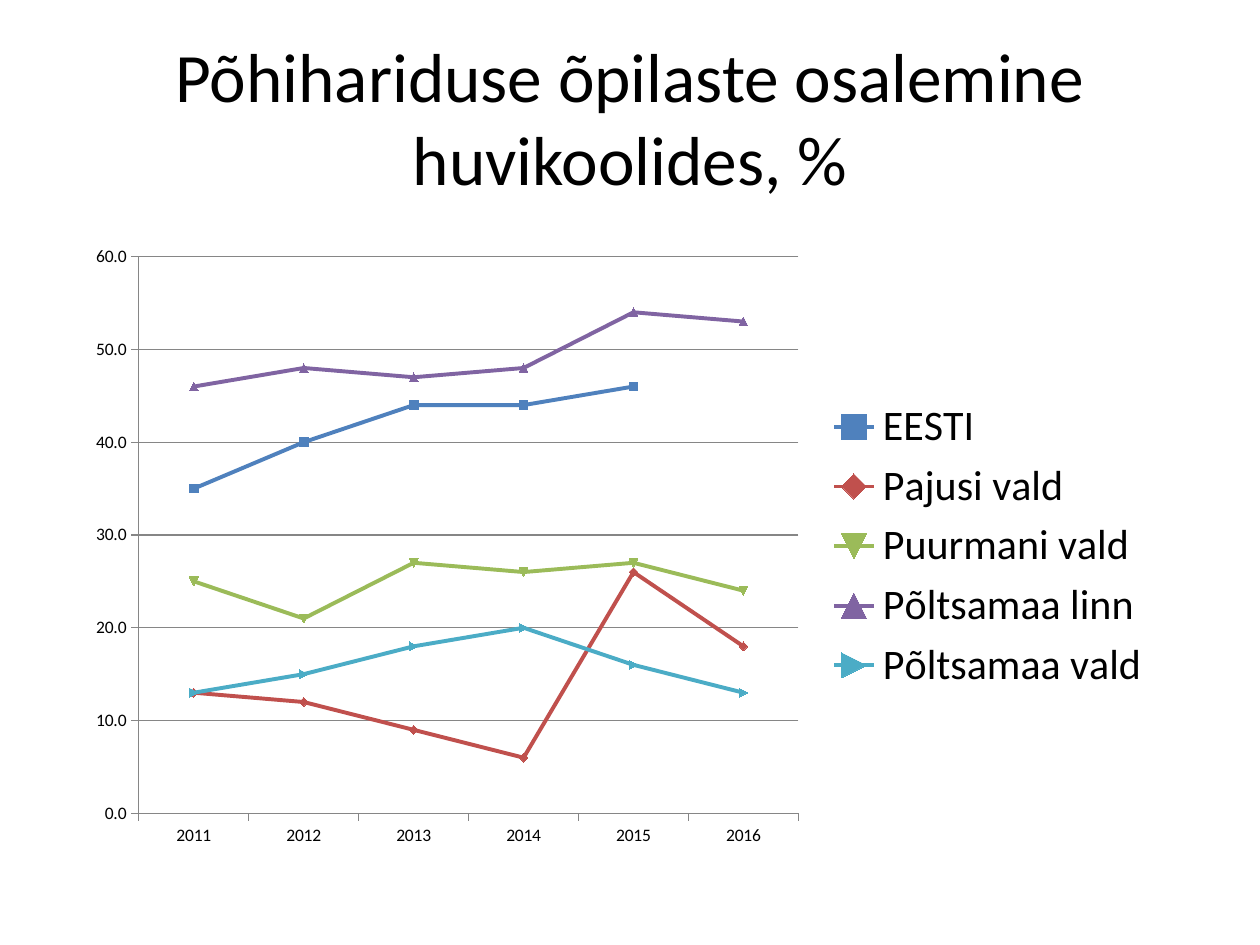
from pptx import Presentation
from pptx.chart.data import CategoryChartData
from pptx.dml.color import RGBColor
from pptx.enum.chart import XL_CHART_TYPE, XL_LEGEND_POSITION, XL_TICK_MARK
from pptx.enum.text import MSO_ANCHOR, PP_ALIGN
from pptx.util import Inches, Pt

BLACK = RGBColor(0x00, 0x00, 0x00)
GREY = RGBColor(0x86, 0x86, 0x86)
BLUE = RGBColor(0x4F, 0x81, 0xBD)
RED = RGBColor(0xC0, 0x50, 0x4D)
GREEN = RGBColor(0x9B, 0xBB, 0x59)
PURPLE = RGBColor(0x80, 0x64, 0xA2)
TEAL = RGBColor(0x4B, 0xAC, 0xC6)

YEARS = ["2011", "2012", "2013", "2014", "2015", "2016"]
REGIONS = [
    ("EESTI", BLUE, (35, 40, 44, 44, 46, None)),
    ("Pajusi vald", RED, (13, 12, 9, 6, 26, 18)),
    ("Puurmani vald", GREEN, (25, 21, 27, 26, 27, 24)),
    ("Põltsamaa linn", PURPLE, (46, 48, 47, 48, 54, 53)),
    ("Põltsamaa vald", TEAL, (13, 15, 18, 20, 16, 13)),
]


def apply_format(target, values):
    for attribute, value in values.items():
        setattr(target, attribute, value)


def style_font(font, size):
    apply_format(font, {"name": "Calibri", "size": Pt(size), "bold": False})
    font.color.rgb = BLACK


deck = Presentation()
apply_format(deck, {"slide_width": Inches(10), "slide_height": Inches(7.5)})
width, height = deck.slide_width, deck.slide_height
slide = deck.slides.add_slide(deck.slide_layouts[5])

heading = slide.shapes.title
apply_format(heading, {
    "left": int(width * 0.05), "top": int(height * 0.04),
    "width": int(width * 0.9), "height": Inches(1.25),
})
apply_format(heading.text_frame, {
    "text": "Põhihariduse õpilaste osalemine huvikoolides, %",
    "vertical_anchor": MSO_ANCHOR.MIDDLE, "word_wrap": True,
})
heading_line = heading.text_frame.paragraphs[0]
heading_line.alignment = PP_ALIGN.CENTER
style_font(heading_line.runs[0].font, 39.6)

participation = CategoryChartData(number_format="#,##0.0")
participation.categories = YEARS
for region, color, shares in REGIONS:
    participation.add_series(region, shares)

chart = slide.shapes.add_chart(
    XL_CHART_TYPE.LINE_MARKERS, Inches(0.59), Inches(1.86),
    Inches(8.66), Inches(4.95), participation,
).chart
apply_format(chart, {"has_title": False, "has_legend": True})
style_font(chart.font, 10)
chart.plots[0].vary_by_categories = False

apply_format(chart.legend, {
    "position": XL_LEGEND_POSITION.RIGHT, "include_in_layout": False,
})
style_font(chart.legend.font, 24)

apply_format(chart.value_axis, {
    "minimum_scale": 0, "maximum_scale": 60, "major_unit": 10,
    "has_major_gridlines": True,
})
apply_format(chart.value_axis.tick_labels, {
    "number_format": "#,##0.0", "number_format_is_linked": False,
})
for axis in (chart.category_axis, chart.value_axis):
    apply_format(axis, {
        "major_tick_mark": XL_TICK_MARK.OUTSIDE,
        "minor_tick_mark": XL_TICK_MARK.NONE,
    })
    style_font(axis.tick_labels.font, 10)
for rule in (chart.category_axis, chart.value_axis, chart.value_axis.major_gridlines):
    rule.format.line.color.rgb = GREY
    rule.format.line.width = Pt(0.75)

for trend, (region, color, shares) in zip(chart.plots[0].series, REGIONS):
    trend.smooth = False
    trend.format.line.color.rgb = color
    trend.format.line.width = Pt(2.25)
    trend.marker.size = 5
    trend.marker.format.fill.solid()
    trend.marker.format.fill.fore_color.rgb = color
    trend.marker.format.line.color.rgb = color

deck.save("out.pptx")
